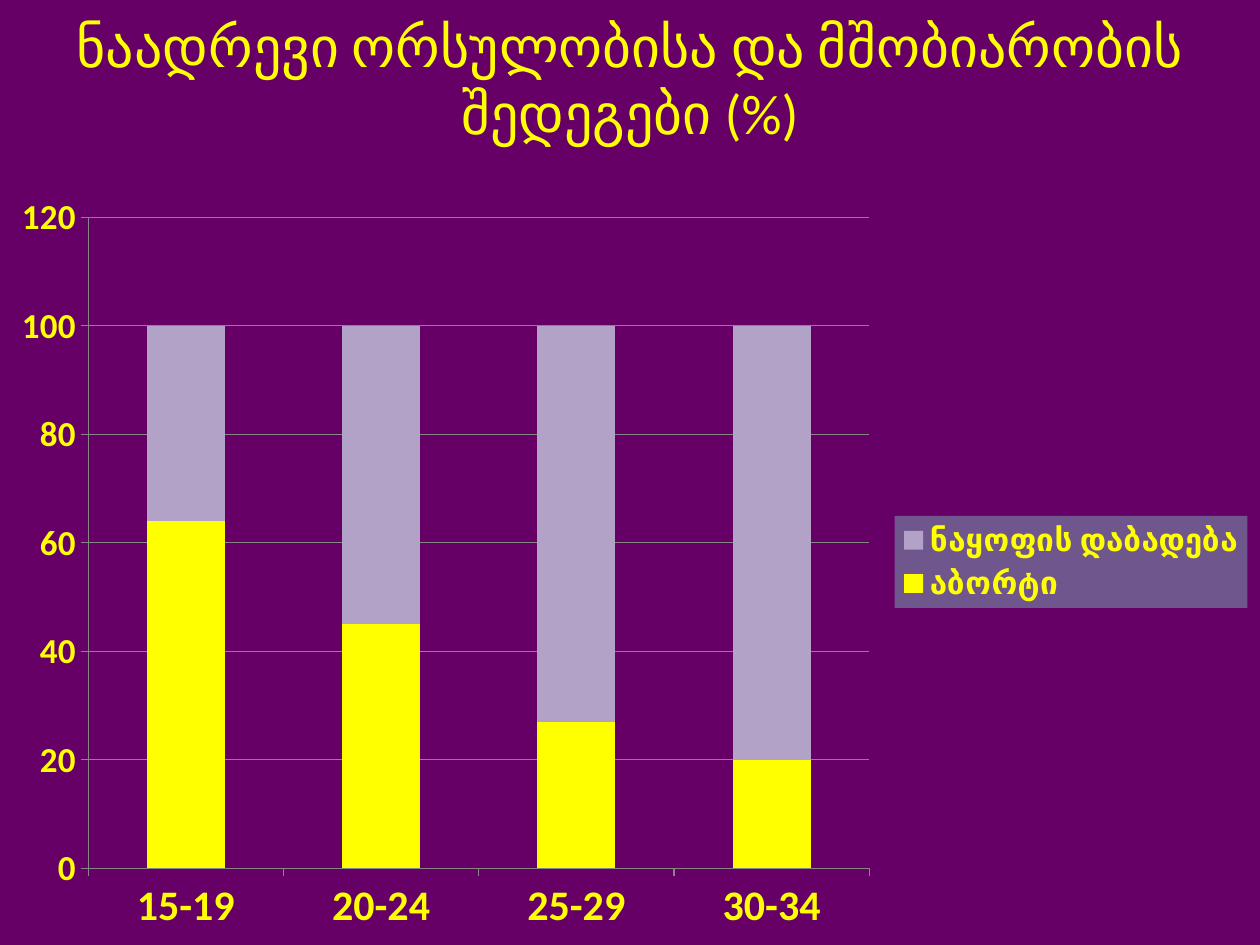
"""Build a slide with a stacked column chart of early pregnancy outcomes."""
from lxml.etree import QName
from pptx import Presentation
from pptx.chart.data import CategoryChartData as Data
from pptx.dml.color import RGBColor
from pptx.enum.chart import XL_CHART_TYPE as Kind, XL_LEGEND_POSITION as Side, XL_TICK_MARK as Tick
from pptx.enum.text import MSO_ANCHOR as Anchor, PP_ALIGN as Align
from pptx.oxml import parse_xml
from pptx.oxml.ns import nsdecls, qn
from pptx.util import Inches, Pt

TITLE = "ნაადრევი ორსულობისა და მშობიარობის შედეგები (%)"
AGES = ["15-19", "20-24", "25-29", "30-34"]
SERIES = [
    ("აბორტი", (64, 45, 27, 20), "FFFF00"),
    ("ნაყოფის დაბადება", (36, 55, 73, 80), "B3A2C7"),
]
FACE, BACK, INK, GRID, PANEL = "Calibri", "660066", "FFFF00", "868686", "6F568C"
WIDE, HIGH, TOP = 10, 7.5, 1.42
PLOT = (0.07, 0.05, 0.62, 0.85)
KEY = (0.71, 0.44, 0.28, 0.12)


def rgb(code):
    return RGBColor.from_string(code)


def paint(fill, code):
    fill.solid()
    fill.fore_color.rgb = rgb(code)


def style(font, size, bold):
    font.name, font.size, font.bold = FACE, Pt(size), bold
    font.color.rgb = rgb(INK)


def layout(box, inner=False):
    target = '<c:layoutTarget val="inner"/>' if inner else ""
    modes = '<c:xMode val="edge"/><c:yMode val="edge"/>'
    sizes = "".join(f'<c:{k} val="{v}"/>' for k, v in zip("xywh", box))
    return parse_xml(f'<c:layout {nsdecls("c")}><c:manualLayout>{target}{modes}{sizes}'
                     '</c:manualLayout></c:layout>')


def clear(node):
    for old in node.findall(qn("c:layout")):
        node.remove(old)


def add_title(slide):
    title = slide.shapes.title
    title.left, title.top = Inches(WIDE * 0.05), 0
    title.width, title.height = Inches(WIDE * 0.9), Inches(1.25)
    frame = title.text_frame
    frame.text, frame.word_wrap = TITLE, True
    frame.vertical_anchor = Anchor.MIDDLE
    line = frame.paragraphs[0]
    line.alignment = Align.CENTER
    style(line.font, 32, False)


def add_key(chart):
    chart.has_legend = True
    key = chart.legend
    key.position, key.include_in_layout = Side.RIGHT, False
    style(key.font, 18, True)
    node = key._element
    clear(node)
    node.find(qn("c:legendPos")).addnext(layout(KEY))
    node.find(qn("c:overlay")).addnext(parse_xml(
        f'<c:spPr {nsdecls("c", "a")}><a:solidFill><a:srgbClr val="{PANEL}"/>'
        '</a:solidFill></c:spPr>'))


def add_chart(slide):
    data = Data()
    data.categories = AGES
    for name, vals, _ in SERIES:
        data.add_series(name, vals)
    chart = slide.shapes.add_chart(
        Kind.COLUMN_STACKED, 0, Inches(TOP), Inches(WIDE), Inches(HIGH - TOP), data).chart
    chart.has_title = False
    style(chart.font, 18, False)
    plot = chart.plots[0]
    plot.gap_width, plot.overlap, plot.vary_by_categories = 150, 100, False
    for part, (_, _, code) in zip(plot.series, SERIES):
        paint(part.format.fill, code)
    for axis, size in ((chart.category_axis, 24), (chart.value_axis, 20)):
        style(axis.tick_labels.font, size, True)
        axis.major_tick_mark, axis.minor_tick_mark = Tick.OUTSIDE, Tick.NONE
        axis.format.line.color.rgb = rgb(GRID)
    scale = chart.value_axis
    scale.minimum_scale, scale.maximum_scale, scale.major_unit = 0, 120, 20
    scale.has_major_gridlines = True
    scale.major_gridlines.format.line.color.rgb = rgb(GRID)
    area = chart._chartSpace.chart.plotArea
    clear(area)
    area.insert(0, layout(PLOT, True))
    add_key(chart)


def main():
    deck = Presentation()
    deck.slide_width, deck.slide_height = Inches(WIDE), Inches(HIGH)
    slide = deck.slides.add_slide(deck.slide_layouts[5])
    paint(slide.background.fill, BACK)
    add_title(slide)
    add_chart(slide)
    deck.save("out.pptx")


if __name__ == "__main__":
    main()
